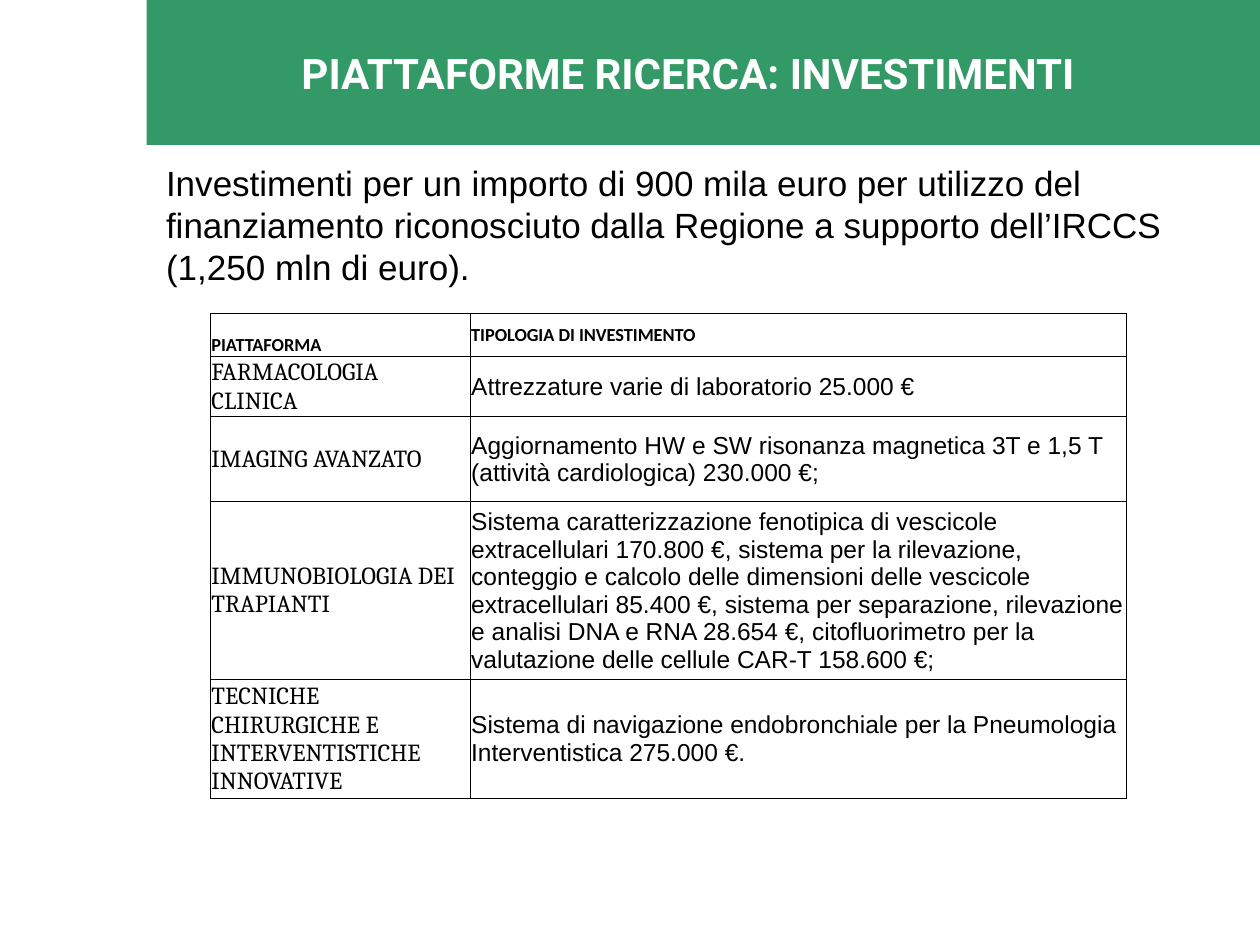
from lxml import etree
from pptx import Presentation
from pptx.dml.color import RGBColor
from pptx.enum.shapes import MSO_SHAPE
from pptx.enum.text import MSO_ANCHOR, PP_ALIGN
from pptx.oxml.ns import qn
from pptx.util import Pt

RECT = MSO_SHAPE.RECTANGLE
TOP, MIDDLE, BOTTOM = MSO_ANCHOR.TOP, MSO_ANCHOR.MIDDLE, MSO_ANCHOR.BOTTOM
LEFT, CENTER = PP_ALIGN.LEFT, PP_ALIGN.CENTER

COLORS = {"green": "339966", "white": "FFFFFF", "black": "000000"}

COL_WIDTHS = [148.5, 375]
ROW_HEIGHTS = [24.5, 34.3, 48.6, 101.2, 68]
HEADERS = ["PIATTAFORMA", "TIPOLOGIA DI INVESTIMENTO"]
INVESTMENTS = [
    ("FARMACOLOGIA CLINICA", "Attrezzature varie di laboratorio 25.000 €"),
    ("IMAGING AVANZATO",
     "Aggiornamento HW e SW risonanza magnetica 3T e 1,5 T "
     "(attività cardiologica) 230.000 €;"),
    ("IMMUNOBIOLOGIA DEI TRAPIANTI",
     "Sistema caratterizzazione fenotipica di vescicole extracellulari "
     "170.800 €, sistema per la rilevazione, conteggio e calcolo delle "
     "dimensioni delle vescicole extracellulari 85.400 €, sistema per "
     "separazione, rilevazione e analisi DNA e RNA 28.654 €, "
     "citofluorimetro per la valutazione delle cellule CAR-T 158.600 €;"),
    ("TECNICHE CHIRURGICHE E INTERVENTISTICHE INNOVATIVE",
     "Sistema di navigazione endobronchiale per la Pneumologia "
     "Interventistica 275.000 €."),
]


def rgb(name):
    return RGBColor.from_string(COLORS[name])


def set_text(tf, text, font, size, color="black", bold=False, align=LEFT):
    p = tf.paragraphs[0]
    p.text = text
    p.alignment = align
    p.font.name = font
    p.font.size = Pt(size)
    p.font.bold = bold
    p.font.color.rgb = rgb(color)


def add_band(s, x, y, w, h):
    sp = s.shapes.add_shape(RECT, Pt(x), Pt(y), Pt(w), Pt(h))
    sp.shadow.inherit = False
    sp.fill.solid()
    sp.fill.fore_color.rgb = rgb("green")
    sp.line.fill.background()


def add_text(s, x, y, w, h, text, font, size, anchor=TOP, **style):
    tf = s.shapes.add_textbox(Pt(x), Pt(y), Pt(w), Pt(h)).text_frame
    tf.word_wrap = True
    tf.vertical_anchor = anchor
    set_text(tf, text, font, size, **style)


def set_borders(cell):
    tc_pr = cell._tc.get_or_add_tcPr()
    for i, side in enumerate(("lnL", "lnR", "lnT", "lnB")):
        ln = etree.Element(qn(f"a:{side}"), w=str(Pt(0.5)))
        fill = etree.SubElement(ln, qn("a:solidFill"))
        etree.SubElement(fill, qn("a:srgbClr"), val=COLORS["black"])
        tc_pr.insert(i, ln)


def fill_cell(cell, text, font, size, anchor=MIDDLE, bold=False):
    cell.margin_left = cell.margin_right = cell.margin_top = Pt(0.6)
    cell.margin_bottom = 0
    cell.vertical_anchor = anchor
    cell.fill.background()
    set_borders(cell)
    set_text(cell.text_frame, text, font, size, bold=bold)


def add_investment_table(s, x, y):
    table = s.shapes.add_table(
        len(ROW_HEIGHTS), len(COL_WIDTHS), Pt(x), Pt(y),
        Pt(sum(COL_WIDTHS)), Pt(sum(ROW_HEIGHTS))).table
    for col, width in zip(table.columns, COL_WIDTHS):
        col.width = Pt(width)
    for row, height in zip(table.rows, ROW_HEIGHTS):
        row.height = Pt(height)

    for c, (header, anchor) in enumerate(zip(HEADERS, (BOTTOM, MIDDLE))):
        fill_cell(table.cell(0, c), header, "Calibri", 10.5, anchor, bold=True)
    for r, (platform, investment) in enumerate(INVESTMENTS, start=1):
        fill_cell(table.cell(r, 0), platform, "Cambria", 14)
        fill_cell(table.cell(r, 1), investment, "Arial", 14)


def main():
    prs = Presentation()
    prs.slide_width, prs.slide_height = Pt(720), Pt(540)
    s = prs.slides.add_slide(prs.slide_layouts[6])

    # Title band
    add_band(s, 83.8, 0, 636.2, 82.8)
    add_text(s, 116, 31.7, 554.4, 20.2, "PIATTAFORME RICERCA: INVESTIMENTI",
             "Roboto", 24, MIDDLE, color="white", bold=True, align=CENTER)

    # Introduction
    add_text(s, 87.8, 88.6, 610.6, 80,
             "Investimenti per un importo di 900 mila euro per utilizzo del "
             "finanziamento riconosciuto dalla Regione a supporto dell’IRCCS "
             "(1,250 mln di euro).", "Arial", 20)

    # Investments by platform
    add_investment_table(s, 120.2, 179.2)

    prs.save("out.pptx")


if __name__ == "__main__":
    main()
